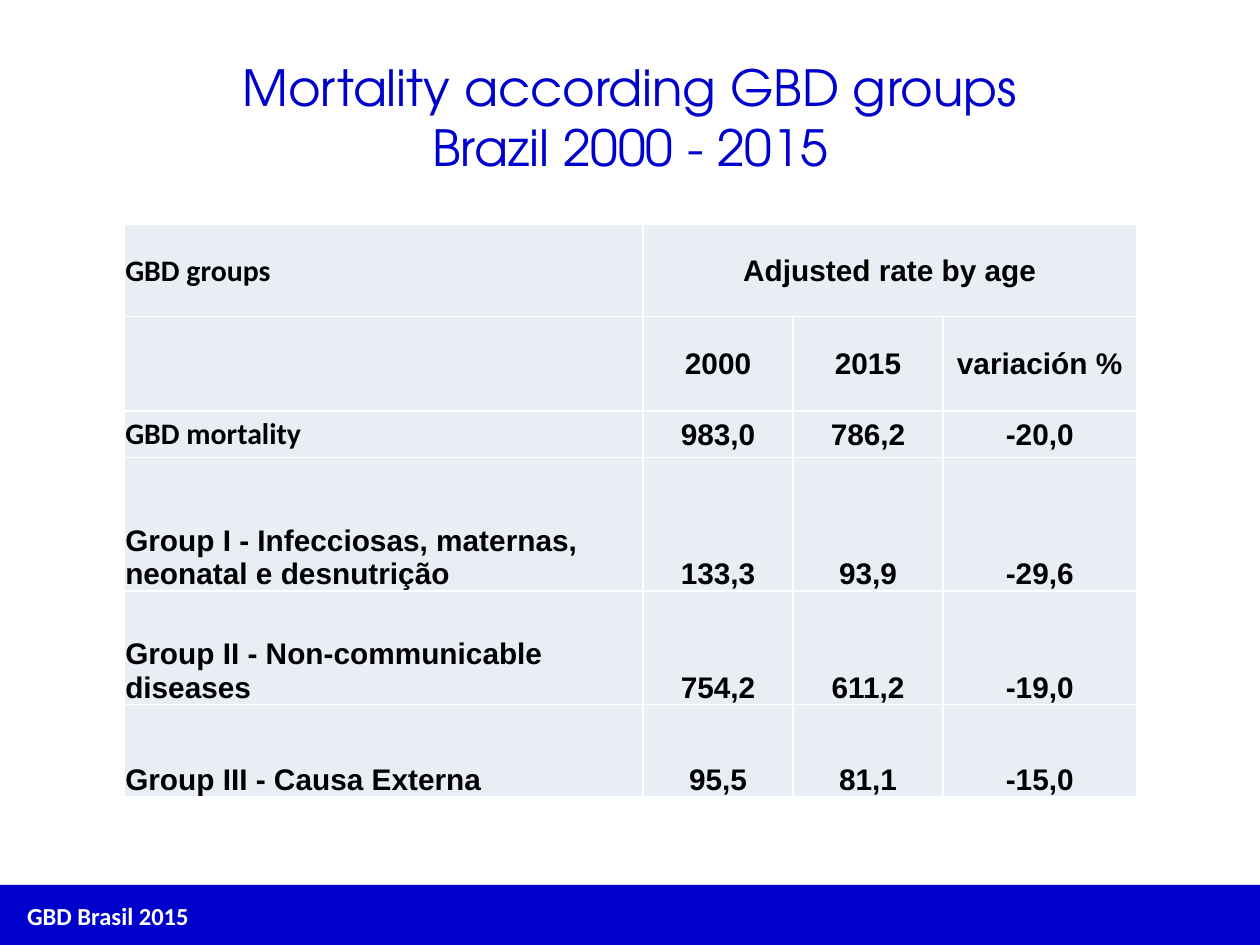
from lxml.etree import SubElement
from pptx import Presentation
from pptx.dml.color import RGBColor
from pptx.enum.shapes import MSO_SHAPE
from pptx.enum.text import MSO_ANCHOR, PP_ALIGN
from pptx.oxml import parse_xml
from pptx.oxml.ns import nsdecls, qn
from pptx.util import Pt

BLUE = RGBColor(0x00, 0x00, 0xCC)
WHITE = RGBColor(0xFF, 0xFF, 0xFF)
BLACK = RGBColor(0x00, 0x00, 0x00)
PALE = RGBColor(0xE9, 0xED, 0xF4)

COL_WIDTHS = [296.6, 85.7, 85.7, 110.6]
ROW_HEIGHTS = [52.6, 54, 26.6, 76.3, 64.8, 52.6]
HEADER_ROWS = 3
ROWS = [
    ["GBD groups", "Adjusted rate by age", "", ""],
    ["", "2000", "2015", "variación %"],
    ["GBD mortality", "983,0", "786,2", "-20,0"],
    ["Group I - Infecciosas, maternas, neonatal e desnutrição", "133,3", "93,9", "-29,6"],
    ["Group II - Non-communicable diseases", "754,2", "611,2", "-19,0"],
    ["Group III - Causa Externa", "95,5", "81,1", "-15,0"],
]


def set_attrs(obj, values):
    for name, value in values.items():
        setattr(obj, name, value)


def write(p, text, color, align=PP_ALIGN.LEFT, **font):
    p.alignment = align
    r = p.add_run()
    r.text = text
    set_attrs(r.font, font)
    r.font.color.rgb = color


def add_bar(s, left, top, width, height):
    sp = s.shapes.add_shape(MSO_SHAPE.RECTANGLE, Pt(left), Pt(top), Pt(width), Pt(height))
    sp.shadow.inherit = False
    sp.fill.solid()
    sp.fill.fore_color.rgb = BLUE
    sp.line.fill.background()


def add_text(s, box, lines, color, align=PP_ALIGN.LEFT, anchor=MSO_ANCHOR.TOP, **font):
    tf = s.shapes.add_textbox(*map(Pt, box)).text_frame
    set_attrs(tf, {"word_wrap": True, "vertical_anchor": anchor})
    for i, line in enumerate(lines):
        p = tf.add_paragraph() if i else tf.paragraphs[0]
        write(p, line, color, align, **font)


def add_borders(cell):
    tc_pr = cell._tc.get_or_add_tcPr()
    for i, side in enumerate("LRTB"):
        ln = parse_xml(f'<a:ln{side} {nsdecls("a")} w="{Pt(1)}"/>')
        fill = SubElement(ln, qn("a:solidFill"))
        SubElement(fill, qn("a:srgbClr")).set("val", str(WHITE))
        tc_pr.insert(i, ln)


def format_cell(cell, text, row, col):
    header = row < HEADER_ROWS
    set_attrs(cell, {
        "margin_left": Pt(0.7), "margin_right": Pt(0.7),
        "margin_top": Pt(0.7), "margin_bottom": Pt(0),
        "vertical_anchor": MSO_ANCHOR.MIDDLE if header else MSO_ANCHOR.BOTTOM,
    })
    cell.fill.solid()
    cell.fill.fore_color.rgb = PALE
    add_borders(cell)
    if text:
        write(cell.text_frame.paragraphs[0], text, BLACK,
              PP_ALIGN.CENTER if col else PP_ALIGN.LEFT,
              name="Calibri" if header and not col else "Arial",
              size=Pt(17), bold=True)


def add_rates_table(s, left, top):
    table = s.shapes.add_table(len(ROWS), len(COL_WIDTHS), Pt(left), Pt(top),
                               Pt(sum(COL_WIDTHS)), Pt(sum(ROW_HEIGHTS))).table
    set_attrs(table, {"first_row": False, "horz_banding": False})
    for column, width in zip(table.columns, COL_WIDTHS):
        column.width = Pt(width)
    for row, height in zip(table.rows, ROW_HEIGHTS):
        row.height = Pt(height)
    table.cell(0, 1).merge(table.cell(0, 3))
    for i, texts in enumerate(ROWS):
        for j, text in enumerate(texts):
            format_cell(table.cell(i, j), text, i, j)


def main():
    """Build the GBD mortality slide and save it."""
    prs = Presentation()
    set_attrs(prs, {"slide_width": Pt(720), "slide_height": Pt(540)})
    s = prs.slides.add_slide(prs.slide_layouts[6])
    add_bar(s, 0, 505.6, 720, 36.6)
    add_text(s, (8.4, 511.2, 158.4, 24.5), ["GBD Brasil 2015"], WHITE,
             name="Calibri", size=Pt(14), bold=True)
    add_text(s, (36, 21.6, 648, 90), ["Mortality according GBD groups", "Brazil 2000 - 2015"],
             BLUE, PP_ALIGN.CENTER, MSO_ANCHOR.MIDDLE,
             name="TeX Gyre Adventor", size=Pt(28.5))
    add_rates_table(s, 70.9, 128.2)
    prs.save("out.pptx")


if __name__ == "__main__":
    main()
